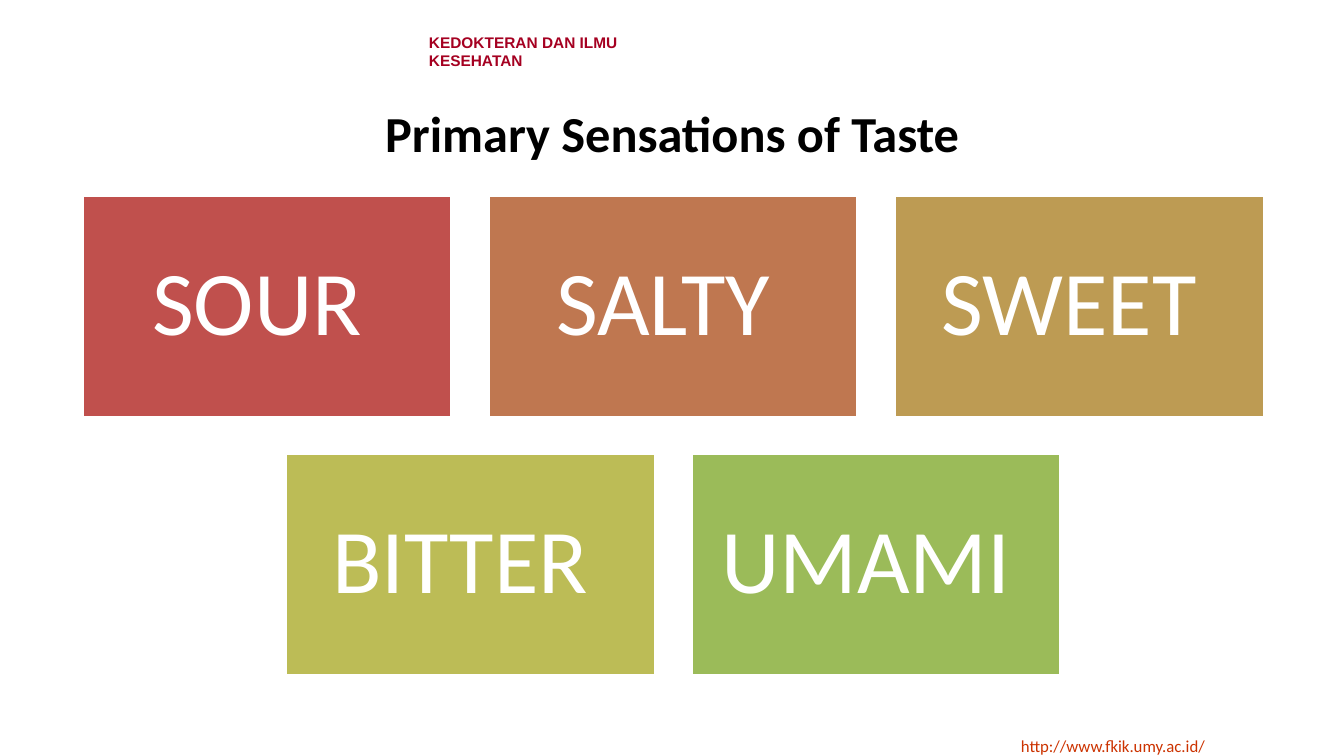
from pptx import Presentation, util as u
from pptx.dml.color import RGBColor
from pptx.enum import shapes, text

PX = 914400 / 100.8
THEME = {
    "white": "FFFFFF", "title": "000000", "faculty": "A50021", "link": "CC3300",
    "tastes": ["C0504D", "BF7750", "BD9B53", "BCBC56", "9BBB59"],
    "faculty_size": 11, "link_size": 12, "title_size": 36, "taste_size": 65,
}


def px(length):
    return u.Emu(round(length * PX))


def write(shape, words, size, color, font="Calibri", bold=False, centred=False, inset=None):
    """Put one middle-anchored paragraph in a shape; inset is in px."""
    frame = shape.text_frame
    frame.word_wrap = True
    frame.vertical_anchor = text.MSO_ANCHOR.MIDDLE
    if inset is not None:
        for side in ("left", "top", "right", "bottom"):
            setattr(frame, f"margin_{side}", px(inset))
    paragraph = frame.paragraphs[0]
    paragraph.alignment = text.PP_ALIGN.CENTER if centred else text.PP_ALIGN.LEFT
    run = paragraph.add_run()
    run.text = words
    for name, value in {"name": font, "size": u.Pt(size), "bold": bold}.items():
        setattr(run.font, name, value)
    run.font.color.rgb = RGBColor.from_string(color)
    return paragraph


prs = Presentation()
prs.slide_width, prs.slide_height = px(1344), px(756)
slide = prs.slides.add_slide(prs.slide_layouts[6])

faculty = slide.shapes.add_shape(shapes.MSO_SHAPE.RECTANGLE, px(419), px(32), px(242), px(39))
faculty.shadow.inherit = False
faculty.fill.solid()
faculty.fill.fore_color.rgb = RGBColor.from_string(THEME["white"])
faculty.line.fill.background()
write(faculty, "KEDOKTERAN DAN ILMU KESEHATAN", THEME["faculty_size"], THEME["faculty"],
      font="Arial", bold=True)

website = slide.shapes.add_textbox(px(1011), px(731), px(275), px(30))
write(website, "http://www.fkik.umy.ac.id/", THEME["link_size"], THEME["link"])

title = slide.shapes.add_textbox(px(69), px(85), px(1207), px(95))
write(title, "Primary Sensations of Taste", THEME["title_size"], THEME["title"],
      bold=True, centred=True)

# Cards fill rows of three; a shorter row is centred
CARD_W, CARD_H, GAP = 369, 221, 37
GRID_LEFT, GRID_TOP, COLUMNS = 83, 196, 3
tastes = ["SOUR ", "SALTY ", "SWEET ", "BITTER ", "UMAMI "]
for index, (taste, color) in enumerate(zip(tastes, THEME["tastes"])):
    row, column = divmod(index, COLUMNS)
    missing = COLUMNS - min(COLUMNS, len(tastes) - row * COLUMNS)
    left = GRID_LEFT + (column + missing / 2) * (CARD_W + GAP)
    top = GRID_TOP + row * (CARD_H + GAP)
    card = slide.shapes.add_shape(shapes.MSO_SHAPE.RECTANGLE,
                                  px(left), px(top), px(CARD_W), px(CARD_H))
    card.shadow.inherit = False
    card.fill.solid()
    card.fill.fore_color.rgb = RGBColor.from_string(color)
    card.line.color.rgb = RGBColor.from_string(THEME["white"])
    card.line.width = u.Pt(2)
    label = write(card, taste, THEME["taste_size"], THEME["white"], centred=True, inset=27)
    label.line_spacing = 0.9

prs.save("out.pptx")
